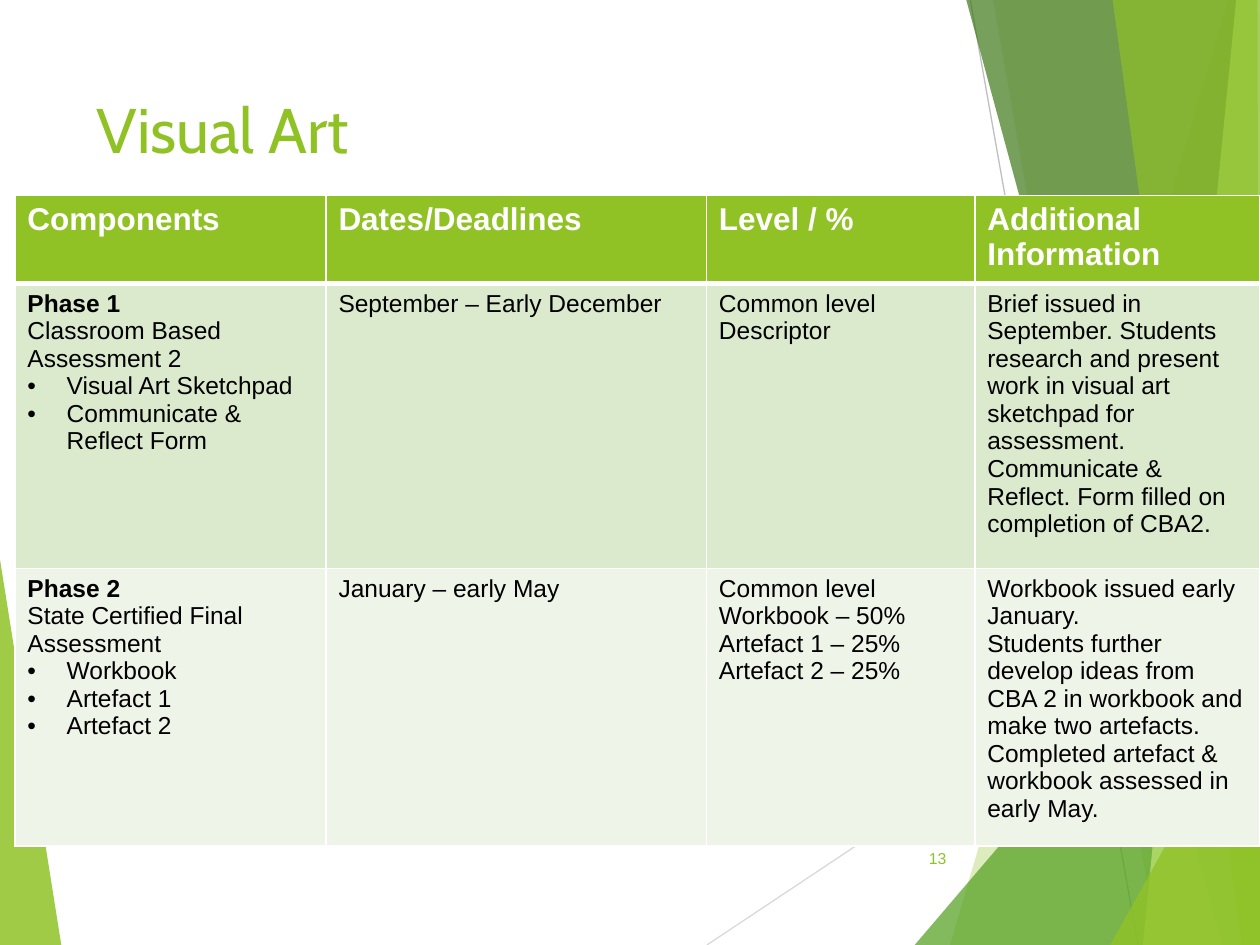
from typing import NamedTuple

from lxml import etree
from pptx import Presentation
from pptx.dml.color import RGBColor
from pptx.enum.shapes import MSO_CONNECTOR
from pptx.enum.text import MSO_ANCHOR, PP_ALIGN
from pptx.oxml.ns import qn
from pptx.util import Cm, Pt

STRAIGHT = MSO_CONNECTOR.STRAIGHT
TOP, MIDDLE = MSO_ANCHOR.TOP, MSO_ANCHOR.MIDDLE
LEFT, RIGHT = PP_ALIGN.LEFT, PP_ALIGN.RIGHT

GREEN, WHITE, BLACK = "90C226", "FFFFFF", "000000"
WIDTH, HEIGHT = 25.4, 19.05
EDGE = 25.43  # facets run slightly past the right edge


class Facet(NamedTuple):
    points: list[tuple[float, float]]
    color: str
    opacity: int


class Ray(NamedTuple):
    start: tuple[float, float]
    end: tuple[float, float]
    color: str


class Para(NamedTuple):
    text: str
    bold: bool = False
    bullet: bool = False


class Row(NamedTuple):
    height: float
    fill: str
    color: str
    size: int
    top: int  # border widths in points
    bottom: int
    cells: list[list[Para]]


def facet_to_edge(top: float, bottom: float, color: str, opacity: int) -> Facet:
    """Full-height facet between a slanted side and the right edge."""
    return Facet([(top, 0), (bottom, HEIGHT), (EDGE, HEIGHT), (EDGE, 0)], color, opacity)


LEFT_FACET = Facet([(-0.02, 11.15), (1.24, 19.07), (-0.02, HEIGHT)], GREEN, 85)
RAYS = [
    Ray((14.25, HEIGHT), (EDGE, 11.61), "D9D9D9"),
    Ray((19.56, 0), (22.94, HEIGHT), "BFBFBF"),
]
RIGHT_FACETS = [
    facet_to_edge(24.76, 19.15, GREEN, 30),
    facet_to_edge(20.02, 23.34, GREEN, 20),
    Facet([(18.44, HEIGHT), (25.4, 10.9), (EDGE, HEIGHT)], "54A021", 72),
    facet_to_edge(19.48, 24.64, "3F7819", 70),
    facet_to_edge(24.92, 23.04, "C0E474", 70),
    Facet([(22.43, 0), (25.04, HEIGHT), (25.4, HEIGHT), (25.35, 0)], GREEN, 65),
    Facet([(22.38, HEIGHT), (EDGE, 13.59), (EDGE, HEIGHT)], GREEN, 80),
]

COLUMNS = [6.27, 7.67, 5.41, 5.74]
HEADINGS = ["Components", "Dates/Deadlines", "Level / %", "Additional Information"]
ROWS = [
    Row(1.78, GREEN, WHITE, 18, 1, 3, [[Para(h, bold=True)] for h in HEADINGS]),
    Row(5.74, "DBE9CD", BLACK, 14, 3, 1, [
        [Para("Phase 1", bold=True), Para("Classroom Based Assessment 2"),
         Para("Visual Art Sketchpad", bullet=True),
         Para("Communicate & Reflect Form", bullet=True)],
        [Para("September – Early December")],
        [Para("Common level"), Para("Descriptor")],
        [Para("Brief issued in September. Students research and present work in "
              "visual art sketchpad for assessment. Communicate & Reflect. "
              "Form filled on completion of CBA2.")],
    ]),
    Row(5.59, "EEF4E8", BLACK, 14, 1, 1, [
        [Para("Phase 2", bold=True), Para("State Certified Final Assessment"),
         Para("Workbook", bullet=True), Para("Artefact 1", bullet=True),
         Para("Artefact 2", bullet=True)],
        [Para("January – early May")],
        [Para("Common level"), Para("Workbook – 50%"),
         Para("Artefact 1 – 25%"), Para("Artefact 2 – 25%")],
        [Para("Workbook issued early January."),
         Para("Students further develop ideas from CBA 2 in workbook and make two "
              "artefacts. Completed artefact & workbook assessed in early May.")],
    ]),
]


def paint(fmt, color: str) -> None:
    """Apply a solid hex colour to a fill."""
    fmt.solid()
    fmt.fore_color.rgb = RGBColor.from_string(color)


def write(tf, paras: list[Para], *, size: int, color: str, font: str = "Arial",
          align=LEFT) -> None:
    for i, para in enumerate(paras):
        p = tf.paragraphs[0] if i == 0 else tf.add_paragraph()
        p.alignment = align
        if para.bullet:
            add_bullet(p)
        r = p.add_run()
        r.text = para.text
        r.font.name, r.font.size, r.font.bold = font, Pt(size), para.bold
        paint(r.font.fill, color)


def add_bullet(p) -> None:
    pPr = p._p.get_or_add_pPr()
    pPr.set("marL", str(Cm(0.79)))
    pPr.set("indent", str(-Cm(0.79)))
    etree.SubElement(pPr, qn("a:buFont")).set("typeface", "Arial")
    etree.SubElement(pPr, qn("a:buChar")).set("char", "•")


def add_facet(slide, facet: Facet) -> None:
    start, *rest = [(Cm(x), Cm(y)) for x, y in facet.points]
    builder = slide.shapes.build_freeform(*start)
    builder.add_line_segments(rest, close=True)
    sp = builder.convert_to_shape()
    sp.shadow.inherit = False
    sp.line.fill.background()
    paint(sp.fill, facet.color)
    clr = sp.fill._xPr.find(qn("a:solidFill"))[0]
    etree.SubElement(clr, qn("a:alpha")).set("val", str(facet.opacity * 1000))


def add_ray(slide, ray: Ray) -> None:
    ends = [Cm(v) for v in ray.start + ray.end]
    line = slide.shapes.add_connector(STRAIGHT, *ends)
    paint(line.line.fill, ray.color)
    line.line.width = Pt(0.75)
    etree.SubElement(line._element.spPr, qn("a:effectLst"))


def add_label(slide, text: str, box: tuple[float, ...], *, anchor=TOP, **fmt) -> None:
    tf = slide.shapes.add_textbox(*[Cm(v) for v in box]).text_frame
    tf.word_wrap = True
    tf.vertical_anchor = anchor
    write(tf, [Para(text)], **fmt)


def set_borders(cell, top: int, bottom: int) -> None:
    tcPr = cell._tc.get_or_add_tcPr()
    for side, width in (("L", 1), ("R", 1), ("T", top), ("B", bottom)):
        ln = etree.SubElement(tcPr, qn(f"a:ln{side}"), w=str(Pt(width)))
        fill = etree.SubElement(ln, qn("a:solidFill"))
        etree.SubElement(fill, qn("a:srgbClr")).set("val", WHITE)


def add_schedule(slide, left: float, top: float) -> None:
    height = sum(row.height for row in ROWS)
    table = slide.shapes.add_table(len(ROWS), len(COLUMNS), Cm(left), Cm(top),
                                   Cm(sum(COLUMNS)), Cm(height)).table
    for column, width in zip(table.columns, COLUMNS):
        column.width = Cm(width)
    for i, row in enumerate(ROWS):
        table.rows[i].height = Cm(row.height)
        for j, paras in enumerate(row.cells):
            cell = table.cell(i, j)
            set_borders(cell, row.top, row.bottom)
            paint(cell.fill, row.fill)
            write(cell.text_frame, paras, size=row.size, color=row.color)


def main() -> None:
    prs = Presentation()
    prs.slide_width, prs.slide_height = Cm(WIDTH), Cm(HEIGHT)
    slide = prs.slides.add_slide(prs.slide_layouts[6])

    # Background facets and rays
    add_facet(slide, LEFT_FACET)
    for ray in RAYS:
        add_ray(slide, ray)
    for facet in RIGHT_FACETS:
        add_facet(slide, facet)

    # Title, schedule and page number
    add_label(slide, "Visual Art", (1.7, 1.7, 17.63, 3.66),
              size=36, color=GREEN, font="Cabin")
    add_schedule(slide, 0.3, 3.94)
    add_label(slide, "13", (17.91, 16.79, 1.42, 1.02), anchor=MIDDLE,
              size=9, color=GREEN, align=RIGHT)

    prs.save("out.pptx")


if __name__ == "__main__":
    main()
